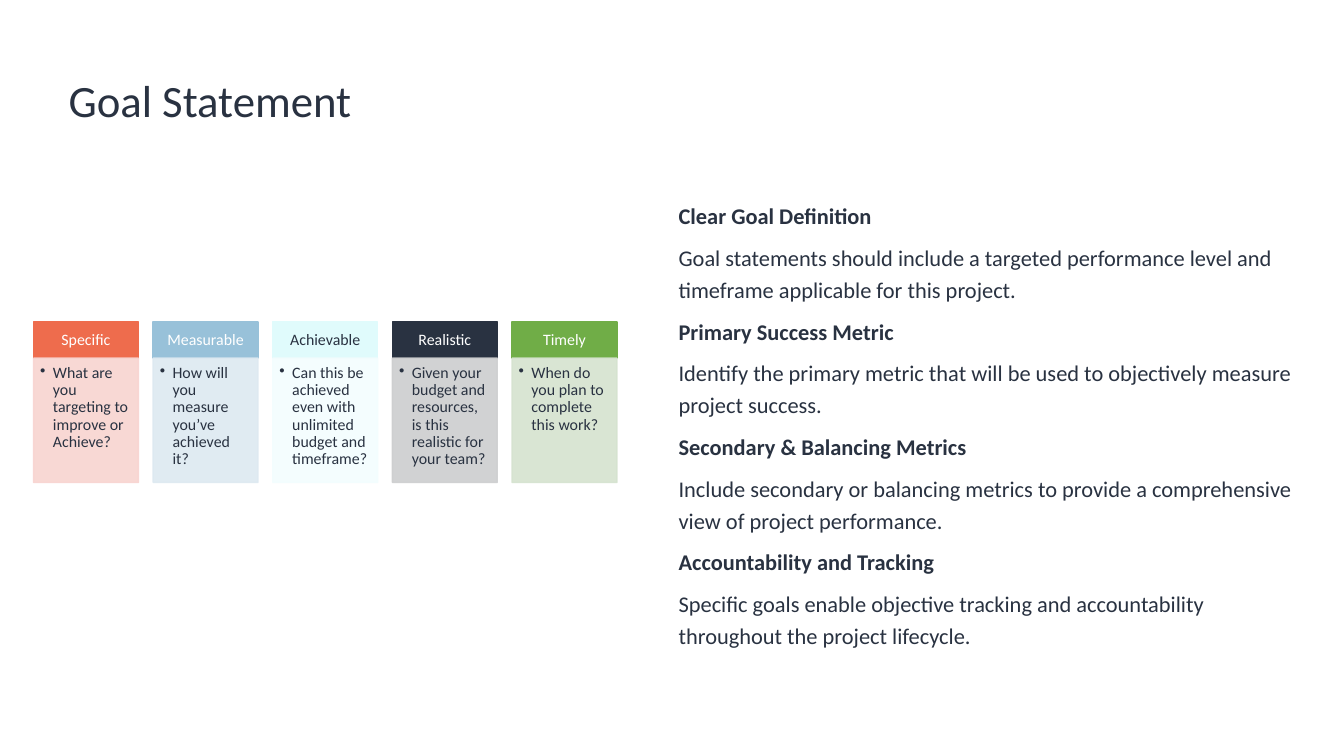
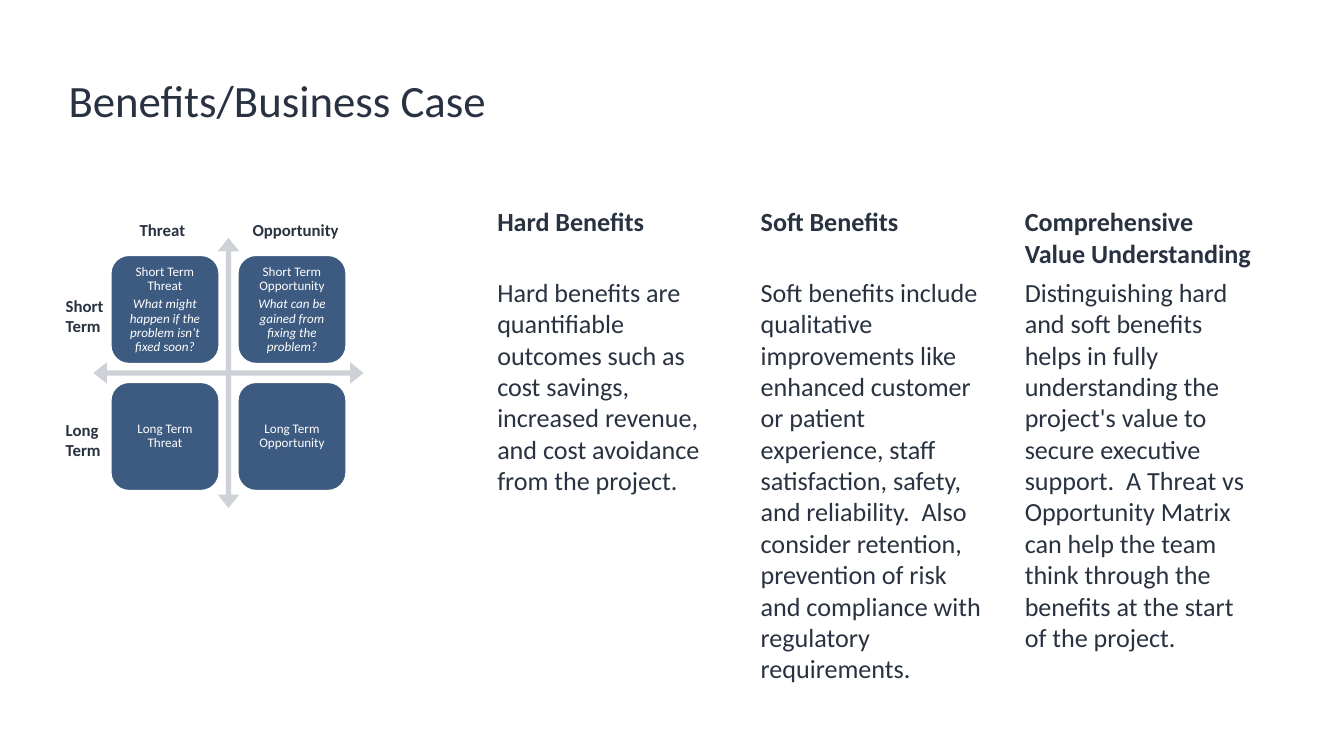
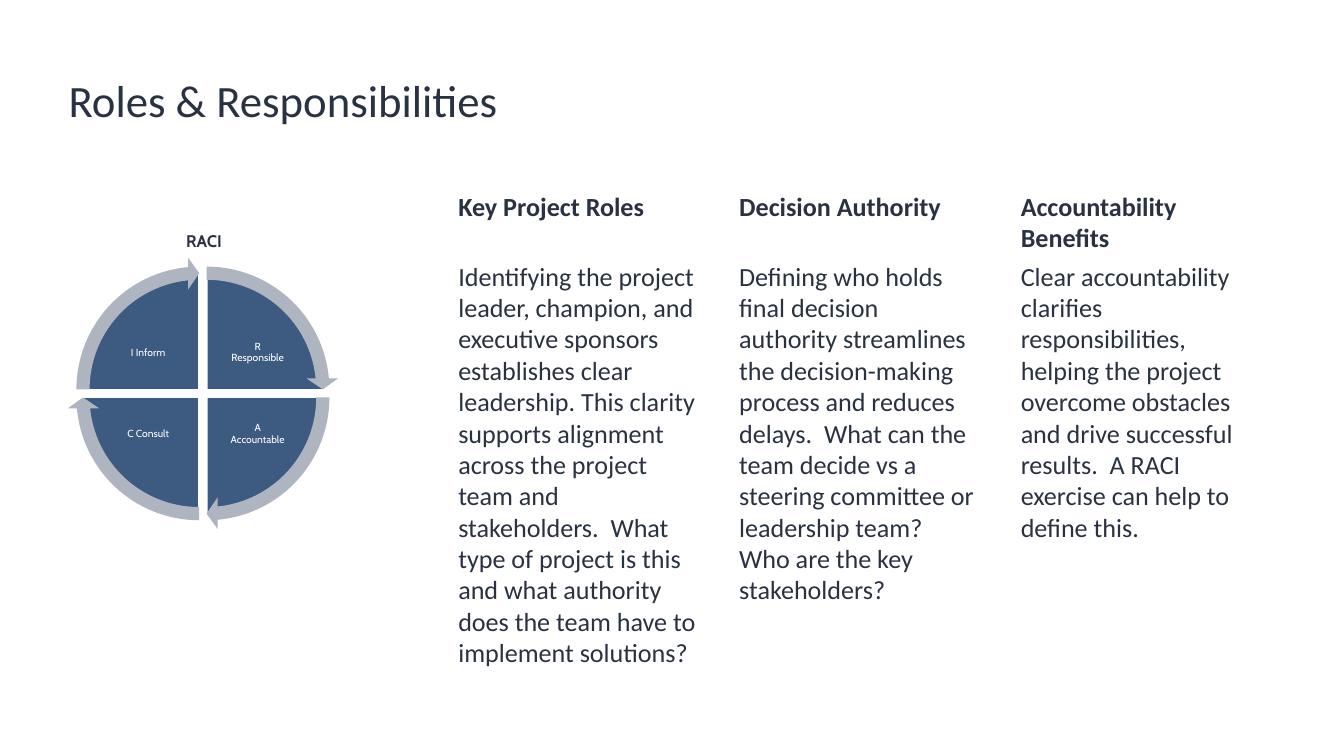
"""Build three project charter slides: goal, benefits and roles."""
from lxml.etree import SubElement
from pptx import Presentation
from pptx.dml.color import RGBColor
from pptx.enum.shapes import MSO_SHAPE as SHAPE
from pptx.enum.text import MSO_ANCHOR as ANCHOR, MSO_AUTO_SIZE as FIT, PP_ALIGN as ALIGN
from pptx.oxml.ns import qn
from pptx.util import Pt

PX = 9144
FONT, RACI_FONT = "Calibri", "Cabin"
COLORS = {
    "ink": "293241", "white": "FFFFFF", "navy": "3D5A80",
    "axis": "CED2D8", "ring": "AFB5C0",
    "coral": "EE6C4D", "coral_tint": "F8D4D0",
    "sky": "98C1D9", "sky_tint": "DDE9F1",
    "ice": "E0FBFC", "ice_tint": "F3FDFE",
    "ink_tint": "CDCECF",
    "green": "70AD47", "green_tint": "D5E3CF",
}
INSETS = (10, 5, 10, 5)
COLUMN_INSETS = (15, 4, 4, 4)

GOALS = [
    "Clear Goal Definition",
    "Goal statements should include a targeted performance level and timeframe applicable for this project.",
    "Primary Success Metric",
    "Identify the primary metric that will be used to objectively measure project success.",
    "Secondary & Balancing Metrics",
    "Include secondary or balancing metrics to provide a comprehensive view of project performance.",
    "Accountability and Tracking",
    "Specific goals enable objective tracking and accountability throughout the project lifecycle.",
]
SMART = [
    ("Specific", "What are you targeting to improve or Achieve?", "coral", "white"),
    ("Measurable", "How will you measure you’ve achieved it?", "sky", "white"),
    ("Achievable", "Can this be achieved even with unlimited budget and timeframe?", "ice", "ink"),
    ("Realistic", "Given your budget and resources, is this realistic for your team?", "ink", "white"),
    ("Timely", "When do you plan to complete this work?", "green", "white"),
]
BENEFITS = [
    ("Hard Benefits",
     "Hard benefits are quantifiable outcomes such as cost savings, increased revenue, "
     "and cost avoidance from the project."),
    ("Soft Benefits",
     "Soft benefits include qualitative improvements like enhanced customer or patient "
     "experience, staff satisfaction, safety, and reliability.  Also consider retention, "
     "prevention of risk and compliance with regulatory requirements."),
    ("Comprehensive Value Understanding",
     "Distinguishing hard and soft benefits helps in fully understanding the project's value "
     "to secure executive support.  A Threat vs Opportunity Matrix can help the team think "
     "through the benefits at the start of the project."),
]
MATRIX = [
    ["Short Term Threat\nWhat might happen if the problem isn’t fixed soon?",
     "Short Term Opportunity\nWhat can be gained from fixing the problem?"],
    ["Long Term Threat", "Long Term Opportunity"],
]
MATRIX_LABELS = [
    ("Threat", 198, 322, 123, 40), ("Opportunity", 366, 322, 217, 40),
    ("Short\nTerm", 88, 435, 117, 71), ("Long\nTerm", 88, 619, 79, 71),
]
ROLES = [
    ("Key Project Roles",
     "Identifying the project leader, champion, and executive sponsors establishes clear "
     "leadership. This clarity supports alignment across the project team and stakeholders.  "
     "What type of project is this and what authority does the team have to implement solutions?"),
    ("Decision Authority",
     "Defining who holds final decision authority streamlines the decision-making process and "
     "reduces delays.  What can the team decide vs a steering committee or leadership team?  "
     "Who are the key stakeholders?"),
    ("Accountability Benefits",
     "Clear accountability clarifies responsibilities, helping the project overcome obstacles "
     "and drive successful results.  A RACI exercise can help to define this."),
]
RACI = [
    ("R Responsible", 1, 0, 162), ("A Accountable", 1, 1, 0),
    ("C Consult", 0, 1, 54), ("I Inform", 0, 0, 108),
]


def rgb(name):
    """Return the named colour."""
    return RGBColor.from_string(COLORS[name])


def box(*lengths):
    """Turn px lengths into EMU."""
    return [length * PX for length in lengths]


def write(tf, text, size, color="ink", font=FONT, bold=False, align=ALIGN.LEFT,
          anchor=ANCHOR.TOP, insets=INSETS, spacing=1.0, after=0):
    """Fill a text frame and format its paragraphs and runs."""
    tf.text = text
    tf.word_wrap, tf.auto_size, tf.vertical_anchor = True, FIT.NONE, anchor
    tf.margin_left, tf.margin_top, tf.margin_right, tf.margin_bottom = box(*insets)
    for p in tf.paragraphs:
        p.alignment, p.line_spacing = align, spacing
        p.space_before, p.space_after = Pt(0), Pt(after)
        for r in p.runs:
            r.font.name, r.font.size, r.font.bold = font, Pt(size), bold
            r.font.color.rgb = rgb(color)
    return tf


def add_text(s, text, at, size, **style):
    """Add a text box."""
    return write(s.shapes.add_textbox(*box(*at)).text_frame, text, size, **style)


def add_shape(s, kind, at, fill, line=None, adjustments=()):
    """Add a flat preset shape."""
    sp = s.shapes.add_shape(kind, *box(*at))
    sp.shadow.inherit = False
    for i, value in enumerate(adjustments):
        sp.adjustments[i] = value
    sp.fill.solid()
    sp.fill.fore_color.rgb = rgb(fill)
    if line:
        sp.line.color.rgb = rgb(line)
        sp.line.width = Pt(1.5)
    else:
        sp.line.fill.background()
    return sp


def set_opacity(sp, percent):
    """Make the fill and line of a shape partly transparent."""
    for color in list(sp.element.spPr.iter(qn("a:srgbClr"))):
        SubElement(color, qn("a:alpha"), val=str(percent * 1000))


def add_bullet(p, indent):
    """Give a paragraph a hanging bullet."""
    pPr = p._p.get_or_add_pPr()
    pPr.set("marL", str(indent * PX))
    pPr.set("indent", str(-indent * PX))
    SubElement(pPr, qn("a:buChar"), char="•")


def add_slide(prs, title):
    """Add a slide with its title."""
    s = prs.slides.add_slide(prs.slide_layouts[5])
    sp = s.shapes.title
    sp.left, sp.top, sp.width, sp.height = box(92, 112, 1725, 190)
    write(sp.text_frame, title, 48, spacing=0.9)
    return s


def add_card(s, left, heading, question, color, heading_color):
    """Add a coloured heading above a tinted box with one bullet."""
    sp = add_shape(s, SHAPE.RECTANGLE, (left, 479, 156, 54), color, color)
    write(sp.text_frame, heading, 17, heading_color, align=ALIGN.CENTER,
          anchor=ANCHOR.MIDDLE, insets=(13, 8, 13, 8), spacing=0.9, after=6)
    tint = f"{color}_tint"
    sp = add_shape(s, SHAPE.RECTANGLE, (left, 533, 156, 185), tint, tint)
    set_opacity(sp, 90)
    tf = write(sp.text_frame, question, 17, insets=(10, 10, 13, 15), spacing=0.9, after=3)
    add_bullet(tf.paragraphs[0], 19)


def add_columns(s, columns, left, top, width, step, head_height, body_height):
    """Add text columns, each a bold heading over a body."""
    for i, (heading, body) in enumerate(columns):
        x = left + round(i * step)
        add_text(s, heading, (x, top, width, head_height), 28, bold=True,
                 insets=COLUMN_INSETS, after=10)
        add_text(s, body, (x, top + head_height, width, body_height), 28,
                 insets=COLUMN_INSETS, after=10)


def add_matrix(s):
    """Add the threat and opportunity matrix with its axes and labels."""
    add_shape(s, SHAPE.QUAD_ARROW, (139, 354, 402, 402), "axis", adjustments=(0.02, 0.04, 0.05))
    for row, cells in enumerate(MATRIX):
        for col, text in enumerate(cells):
            at = (165 + 189 * col, 380 + 189 * row, 161, 161)
            sp = add_shape(s, SHAPE.ROUNDED_RECTANGLE, at, "navy", "white")
            tf = write(sp.text_frame, text, 14, "white", align=ALIGN.CENTER,
                       anchor=ANCHOR.MIDDLE, insets=(6, 6, 6, 6), spacing=0.9, after=5)
            for p in tf.paragraphs[1:]:
                p.runs[0].font.italic = True
    for text, *at in MATRIX_LABELS:
        add_text(s, text, at, 18, bold=True)


def add_raci_wheel(s):
    """Add the four RACI quarters inside a ring of arrows."""
    for text, col, row, start in RACI:
        at = (121 + 12 * col, 405 + 11 * row, 350, 350)
        add_shape(s, SHAPE.PIE, at, "navy", "white", (start, (start + 54) % 216))
        add_text(s, text, (175 + 163 * col, 491 + 121 * row, 91, 68), 11, color="white",
                 font=RACI_FONT, align=ALIGN.CENTER, anchor=ANCHOR.MIDDLE,
                 insets=(2, 2, 2, 2), spacing=0.9, after=4)
    for text, col, row, start in RACI:
        at = (100 + 11 * col, 383 + 12 * row, 393, 393)
        add_shape(s, SHAPE.CIRCULAR_ARROW, at, "ring",
                  adjustments=(0.05, 3.28, start + 50.73, start, 0.06))
    add_text(s, "RACI", (267, 339, 87, 40), 18, font=RACI_FONT, bold=True)


def add_goal_slide(prs):
    """Add the goal statement slide."""
    s = add_slide(prs, "Goal Statement")
    tf = add_text(s, "\n".join(GOALS), (1000, 288, 933, 808), 24, spacing=1.2)
    for i, p in enumerate(tf.paragraphs):
        p.space_before = Pt(10 if i else 0)
        p.runs[0].font.bold = i % 2 == 0
    for i, card in enumerate(SMART):
        add_card(s, 50 + 178 * i, *card)


def main():
    """Build and save the deck."""
    prs = Presentation()
    prs.slide_width, prs.slide_height = box(2000, 1125)
    add_goal_slide(prs)
    s = add_slide(prs, "Benefits/Business Case")
    add_columns(s, BENEFITS, 725, 302, 357, 392.5, 105, 462)
    add_matrix(s)
    s = add_slide(prs, "Roles & Responsibilities")
    add_columns(s, ROLES, 667, 279, 380, 418.5, 104, 638)
    add_raci_wheel(s)
    prs.save("out.pptx")


if __name__ == "__main__":
    main()
